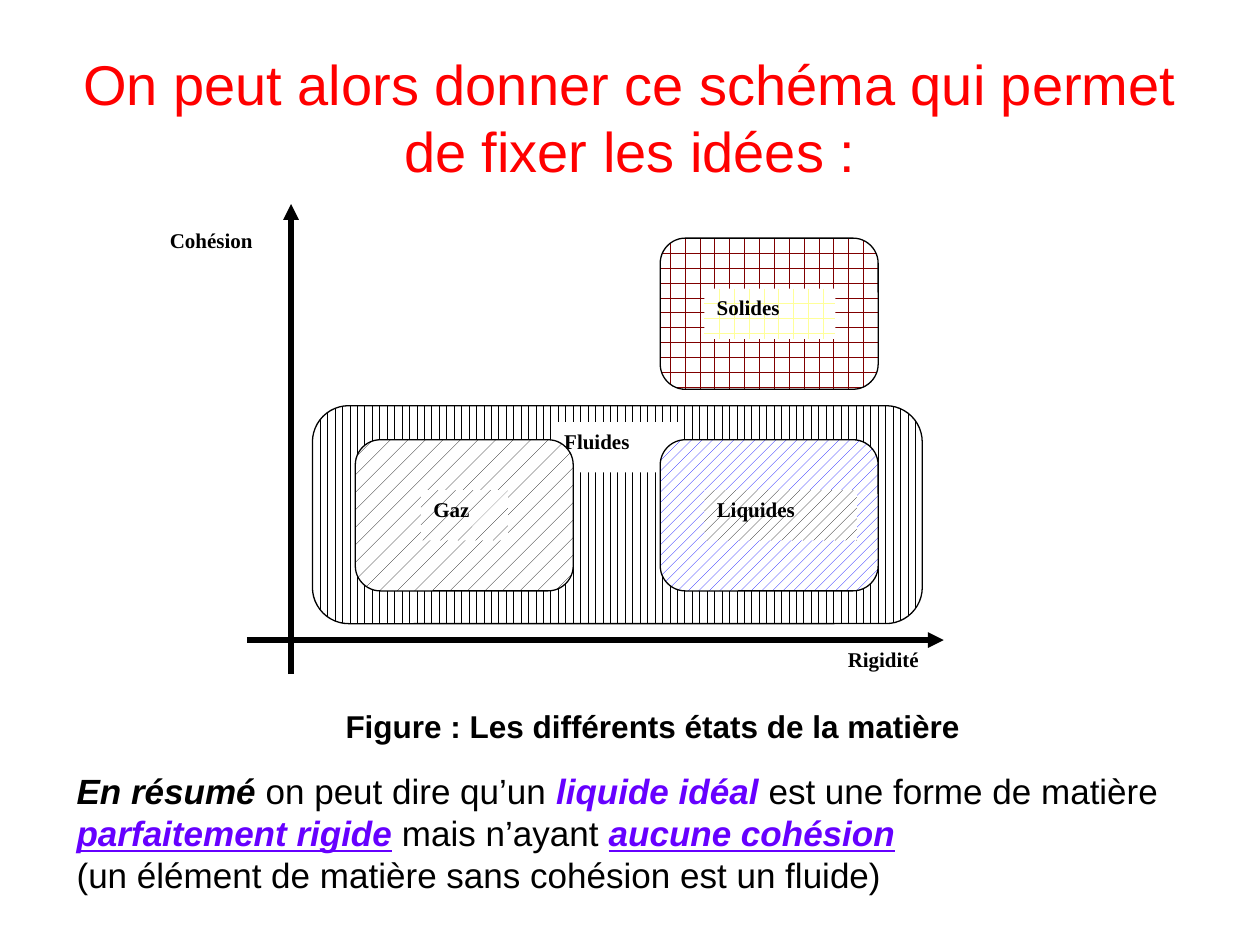
from lxml import etree
from pptx import Presentation
from pptx.dml.color import RGBColor
from pptx.enum.dml import MSO_PATTERN
from pptx.enum.shapes import MSO_CONNECTOR, MSO_SHAPE
from pptx.enum.text import MSO_ANCHOR, PP_ALIGN
from pptx.oxml.ns import qn
from pptx.util import Inches, Pt

BLACK = RGBColor(0x00, 0x00, 0x00)
WHITE = RGBColor(0xFF, 0xFF, 0xFF)
RED = RGBColor(0xFF, 0x00, 0x00)
BLUE = RGBColor(0x00, 0x00, 0xFF)
MAROON = RGBColor(0x80, 0x00, 0x00)
YELLOW = RGBColor(0xFF, 0xFF, 0x99)
VIOLET = RGBColor(0x66, 0x00, 0xFF)

STRIPES = MSO_PATTERN.DASHED_VERTICAL
LIGHT_DOTS = MSO_PATTERN.PERCENT_5
DOTS = MSO_PATTERN.PERCENT_20
BRICKS = MSO_PATTERN.HORIZONTAL_BRICK
RECT, ROUNDED = MSO_SHAPE.RECTANGLE, MSO_SHAPE.ROUNDED_RECTANGLE
STRAIGHT = MSO_CONNECTOR.STRAIGHT
LEFT, CENTER = PP_ALIGN.LEFT, PP_ALIGN.CENTER
TOP, MIDDLE = MSO_ANCHOR.TOP, MSO_ANCHOR.MIDDLE

STATE_SIZE = (1.73, 1.2)
GAS_X, RIGHT_X = 2.82, 5.24
SOLID_Y, FLUID_Y = 1.89, 3.49


class Diagram:
    font = "Arial"
    label_font = "Times New Roman"

    def __init__(self, prs):
        self.s = prs.slides.add_slide(prs.slide_layouts[5])

    def style(self, p, size, color=BLACK, bold=False, font=None, align=LEFT):
        p.alignment = align
        p.font.name = font or self.font
        p.font.size = Pt(size)
        p.font.bold = bold
        p.font.color.rgb = color

    def title(self, text, x, y, w, h):
        sp = self.s.shapes.title
        sp.left, sp.top, sp.width, sp.height = map(Inches, (x, y, w, h))
        sp.text_frame.text = text
        sp.text_frame.vertical_anchor = MIDDLE
        self.style(sp.text_frame.paragraphs[0], 32, RED, align=CENTER)

    def box(self, kind, x, y, w, h, color=WHITE, pattern=None):
        """Add a shape filled with a plain colour, or with a pattern on white."""
        sp = self.s.shapes.add_shape(kind, *map(Inches, (x, y, w, h)))
        sp.shadow.inherit = False
        if pattern is None:
            sp.fill.solid()
            sp.fill.fore_color.rgb = color
        else:
            sp.fill.patterned()
            sp.fill.pattern = pattern
            sp.fill.fore_color.rgb = color
            sp.fill.back_color.rgb = WHITE
        return sp

    def region(self, x, y, w, h, color, pattern):
        sp = self.box(ROUNDED, x, y, w, h, color, pattern)
        sp.line.color.rgb = BLACK
        sp.line.width = Pt(0.75)

    def label(self, text, x, y, w, h=0.4, color=WHITE, pattern=None):
        sp = self.box(RECT, x, y, w, h, color, pattern)
        sp.line.fill.background()
        tf = sp.text_frame
        tf.text = text
        tf.vertical_anchor = TOP
        self.style(tf.paragraphs[0], 12, bold=True, font=self.label_font)

    def axis(self, x1, y1, x2, y2):
        c = self.s.shapes.add_connector(STRAIGHT, *map(Inches, (x1, y1, x2, y2)))
        c.line.color.rgb = BLACK
        c.line.width = Pt(3)
        etree.SubElement(c.line._get_or_add_ln(), qn("a:tailEnd"), type="triangle")
        etree.SubElement(c._element.spPr, qn("a:effectLst"))

    def text(self, paragraphs, x, y, w, h, size, bold=False, align=LEFT, wrap=True):
        """Each paragraph is a list of (text, color, emphasis); emphasis holds b, i, u."""
        tf = self.s.shapes.add_textbox(*map(Inches, (x, y, w, h))).text_frame
        tf.word_wrap = wrap
        tf.vertical_anchor = MIDDLE
        for i, runs in enumerate(paragraphs):
            p = tf.add_paragraph() if i else tf.paragraphs[0]
            self.style(p, size, bold=bold, align=align)
            for text, color, emphasis in runs:
                r = p.add_run()
                r.text = text
                r.font.color.rgb = color
                if emphasis:
                    r.font.bold = "b" in emphasis
                    r.font.italic = "i" in emphasis
                    r.font.underline = "u" in emphasis


def main():
    prs = Presentation()
    prs.slide_width, prs.slide_height = Inches(10), Inches(7.5)
    d = Diagram(prs)

    d.title("On peut alors donner ce schéma qui permet de fixer les idées :",
            0.5, 0.3, 9, 1.25)

    d.axis(2.31, 5.35, 2.31, 1.62)
    d.region(2.48, 3.22, 4.84, 1.73, BLACK, STRIPES)
    d.label("Fluides", 4.38, 3.35, 1.04)
    d.region(GAS_X, FLUID_Y, *STATE_SIZE, BLACK, LIGHT_DOTS)
    d.region(RIGHT_X, FLUID_Y, *STATE_SIZE, BLUE, DOTS)
    d.region(RIGHT_X, SOLID_Y, *STATE_SIZE, MAROON, BRICKS)
    d.label("Liquides", 5.59, FLUID_Y + 0.4, 1.21, color=BLACK, pattern=DOTS)
    d.label("Gaz", 3.34, FLUID_Y + 0.4, 0.69, color=BLACK, pattern=LIGHT_DOTS)
    d.label("Solides", 5.59, SOLID_Y + 0.4, 1.04, color=YELLOW, pattern=BRICKS)
    d.label("Rigidité", 6.63, 5.08, 1.21)
    d.axis(1.96, 5.08, 7.49, 5.08)
    d.label("Cohésion", 1.25, 1.76, 0.96, 0.44)

    d.text([[("Figure : Les différents états de la matière", BLACK, "")]],
           2.64, 5.56, 5.08, 0.4, 18, bold=True, align=CENTER, wrap=False)
    d.text([
        [("En résumé", BLACK, "bi"),
         (" on peut dire qu’un ", BLACK, ""),
         ("liquide idéal", VIOLET, "bi"),
         (" est une forme de matière ", BLACK, ""),
         ("parfaitement rigide", VIOLET, "biu"),
         (" mais n’ayant ", BLACK, ""),
         ("aucune cohésion", VIOLET, "biu"),
         (" ", BLACK, "")],
        [("(un élément de matière sans cohésion est un fluide)", BLACK, "")],
    ], 0.51, 6.06, 9.24, 1.1, 20)

    prs.save("out.pptx")


if __name__ == "__main__":
    main()
